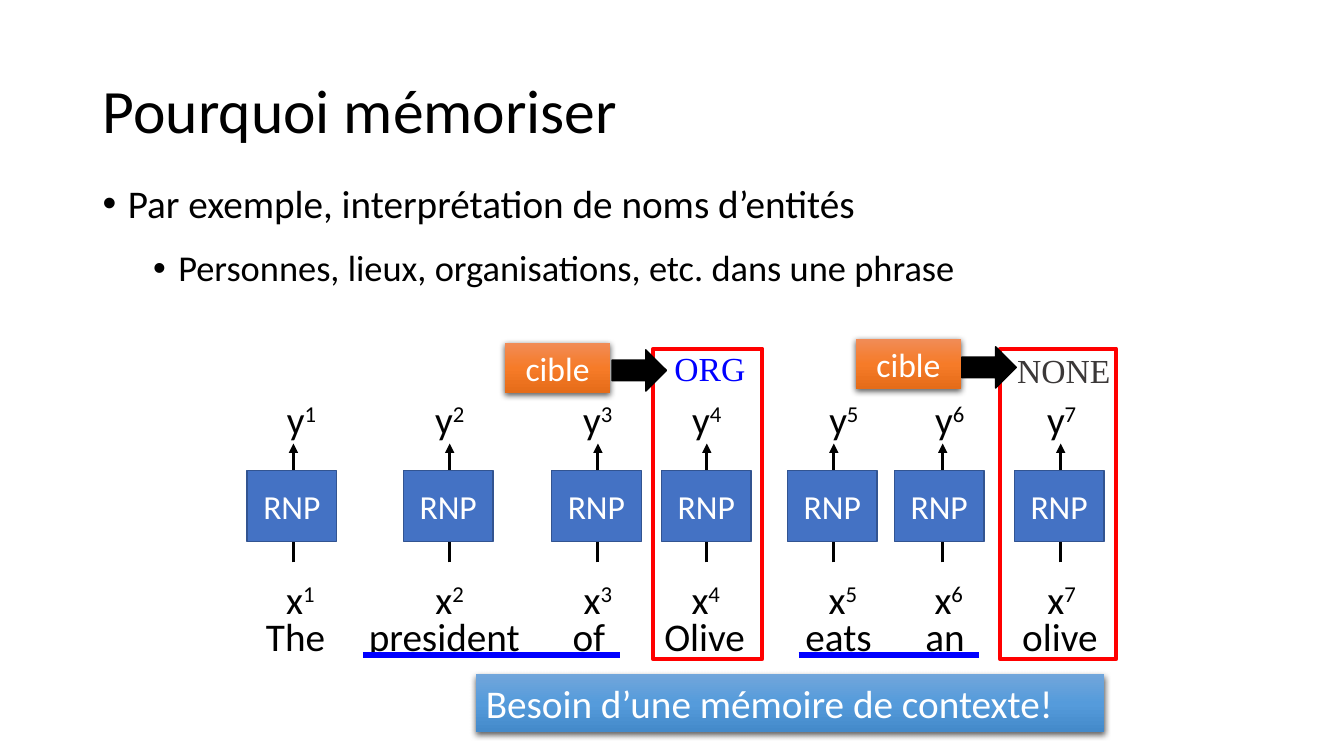
from copy import deepcopy

from lxml import etree
from pptx import Presentation
from pptx import util as u
from pptx.dml.color import RGBColor
from pptx.enum import shapes, text
from pptx.oxml import ns

PX = 9144  # EMU per px, 100 px to the inch
COLORS = {
    "black": "000000", "white": "FFFFFF", "gray": "3B3838",
    "blue": "0000FF", "red": "FF0000", "cell": "4472C4", "cell_edge": "325491",
}
ORANGE = ("F18C57", "F67B28", "E56C19")
SKY = ("71A6DB", "559BDB", "448ACA")
LEFT, CENTER = text.PP_ALIGN.LEFT, text.PP_ALIGN.CENTER
TOP, MIDDLE = text.MSO_ANCHOR.TOP, text.MSO_ANCHOR.MIDDLE
SHAPE = shapes.MSO_SHAPE

# Per time step: left of the cell, x of the arrow, left of the x and y labels
STEPS = [
    (245, 291, 256, 257), (400, 446, 404, 404), (547, 593, 551, 551),
    (656, 701, 658, 659), (781, 827, 794, 795), (887, 935, 899, 900),
    (1006, 1052, 1011, 1011),
]
WORDS = ["The", "president", "of", "Olive", "eats", "an", "olive"]
WORD_TABS = [102, 304, 395, 535, 654, 750]


def px(*lengths):
    return [u.Emu(length * PX) for length in lengths]


def rgb(name):
    return RGBColor.from_string(COLORS.get(name, name))


def add_xml(parent, tag, **attributes):
    values = {key: str(value) for key, value in attributes.items()}
    return etree.SubElement(parent, ns.qn(tag), values)


def style_span(span, size, color="black", font="Calibri"):
    span.font.size = u.Pt(size)
    span.font.name = font
    span.font.color.rgb = rgb(color)


def write(shape, words, size, color="black", font="Calibri", align=LEFT, anchor=TOP):
    frame = shape.text_frame
    frame.word_wrap = True
    frame.vertical_anchor = anchor
    frame.text = words
    para = frame.paragraphs[0]
    para.alignment = align
    style_span(para.runs[0], size, color, font)
    return para


def add_text(page, area, words, size, **style):
    box = page.shapes.add_textbox(*px(*area))
    return write(box, words, size, **style)


def add_indexed(page, area, letter, index):
    para = add_text(page, area, letter, 28, align=CENTER)
    span = para.add_run()
    span.text = str(index)
    style_span(span, 28)
    span.font._element.set("baseline", "30000")


def add_line(page, start, end, color, width, arrow=False):
    line = page.shapes.add_connector(
        shapes.MSO_CONNECTOR.STRAIGHT, *px(*start, *end))
    line.line.color.rgb = rgb(color)
    line.line.width = u.Pt(width)
    if arrow:
        add_xml(line.line._get_or_add_ln(), "a:tailEnd", type="triangle")
    add_xml(line._element.spPr, "a:effectLst")


def add_block(page, area, fill=None, edge=None, width=1, kind=SHAPE.RECTANGLE):
    block = page.shapes.add_shape(kind, *px(*area))
    block.shadow.inherit = False
    if fill:
        block.fill.solid()
        block.fill.fore_color.rgb = rgb(fill)
    else:
        block.fill.background()
    if edge:
        block.line.color.rgb = rgb(edge)
        block.line.width = u.Pt(width)
    else:
        block.line.fill.background()
    return block


def add_glossy(page, area, shades, words, size, align):
    block = add_block(page, area)
    write(block, words, size, "white", align=align)
    # Three-stop vertical gradient
    block.fill.gradient()
    block.fill.gradient_angle = 270
    properties = block._element.spPr
    stops = properties.find(".//" + ns.qn("a:gsLst"))
    stops.append(deepcopy(stops[0]))
    for number, (stop, shade) in enumerate(zip(block.fill.gradient_stops, shades)):
        stop.position = number / 2
        stop.color.rgb = rgb(shade)
    # Soft shadow below
    shadow = add_xml(properties.find(ns.qn("a:effectLst")), "a:outerShdw",
                     blurRad=u.Pt(4.5), dist=u.Pt(1.5), dir=5400000,
                     algn="ctr", rotWithShape=0)
    tint = add_xml(shadow, "a:srgbClr", val=COLORS["black"])
    add_xml(tint, "a:alpha", val=63000)


def add_bullets(page, area, items):
    box = page.shapes.add_textbox(*px(*area))
    frame = box.text_frame
    frame.word_wrap = True
    frame.text = "\n".join(item[0] for item in items)
    for para, (_, size, level, indent, before, after) in zip(frame.paragraphs, items):
        para.level = level
        para.line_spacing = 0.9
        para.space_before, para.space_after = u.Pt(before), u.Pt(after)
        style_span(para.runs[0], size)
        properties = para._p.get_or_add_pPr()
        properties.set("marL", str(indent * PX))
        properties.set("indent", str(-25 * PX))
        add_xml(properties, "a:buFont", typeface="Arial")
        add_xml(properties, "a:buChar", char="•")


def add_sentence(page, area):
    para = add_text(page, area, "\t".join(WORDS), 28)
    tabs = add_xml(para._p.get_or_add_pPr(), "a:tabLst")
    for position in WORD_TABS:
        add_xml(tabs, "a:tab", pos=position * PX, algn="l")


def add_step(page, index, cell_left, arrow_x, x_left, y_left):
    add_line(page, (arrow_x, 558), (arrow_x, 440), "black", 2.25, arrow=True)
    add_indexed(page, (x_left, 566, 84, 57), "x", index)
    add_indexed(page, (y_left, 387, 84, 57), "y", index)
    cell = add_block(page, (cell_left, 467, 89, 70), "cell", "cell_edge")
    write(cell, "RNP", 24, "white", align=CENTER, anchor=MIDDLE)


def main():
    deck = Presentation()
    deck.slide_width, deck.slide_height = px(1333, 750)
    page = deck.slides.add_slide(deck.slide_layouts[6])

    # Title and bullets
    title = add_text(page, (92, 40, 1150, 145), "Pourquoi mémoriser", 44, anchor=MIDDLE)
    title.line_spacing = 0.9
    add_bullets(page, (92, 178, 1150, 476), [
        ("Par exemple, interprétation de noms d’entités", 28, 0, 25, 10, 12),
        ("Personnes, lieux, organisations, etc. dans une phrase", 26, 1, 75, 5, 0),
    ])

    # Network steps above the sentence
    for index, step in enumerate(STEPS, 1):
        add_step(page, index, *step)
    add_sentence(page, (254, 603, 866, 57))

    # Labels and frames of the two compared words
    for area, label, color in [((659, 340, 91, 51), "ORG", "blue"),
                               ((999, 342, 113, 51), "NONE", "gray")]:
        para = add_text(page, area, label, 24, color=color, font="Times New Roman")
        para._parent.word_wrap = False
    for left, width in [(648, 108), (992, 115)]:
        add_block(page, (left, 346, width, 308), edge="red", width=3)

    # Conclusion and context underlines
    add_glossy(page, (472, 669, 623, 57), SKY,
               "Besoin d’une mémoire de contexte!", 28, LEFT)
    for start, end in [(360, 615), (792, 971)]:
        add_line(page, (start, 650), (end, 650), "blue", 4.5)

    # Targets pointing at the labels
    for left, top, arrow_left, arrow_top in [(501, 340, 607, 347), (849, 336, 954, 344)]:
        add_glossy(page, (left, top, 104, 50), ORANGE, "cible", 24, CENTER)
        add_block(page, (arrow_left, arrow_top, 54, 41), "black", "black",
                  kind=SHAPE.RIGHT_ARROW)

    deck.save("out.pptx")


if __name__ == "__main__":
    main()
